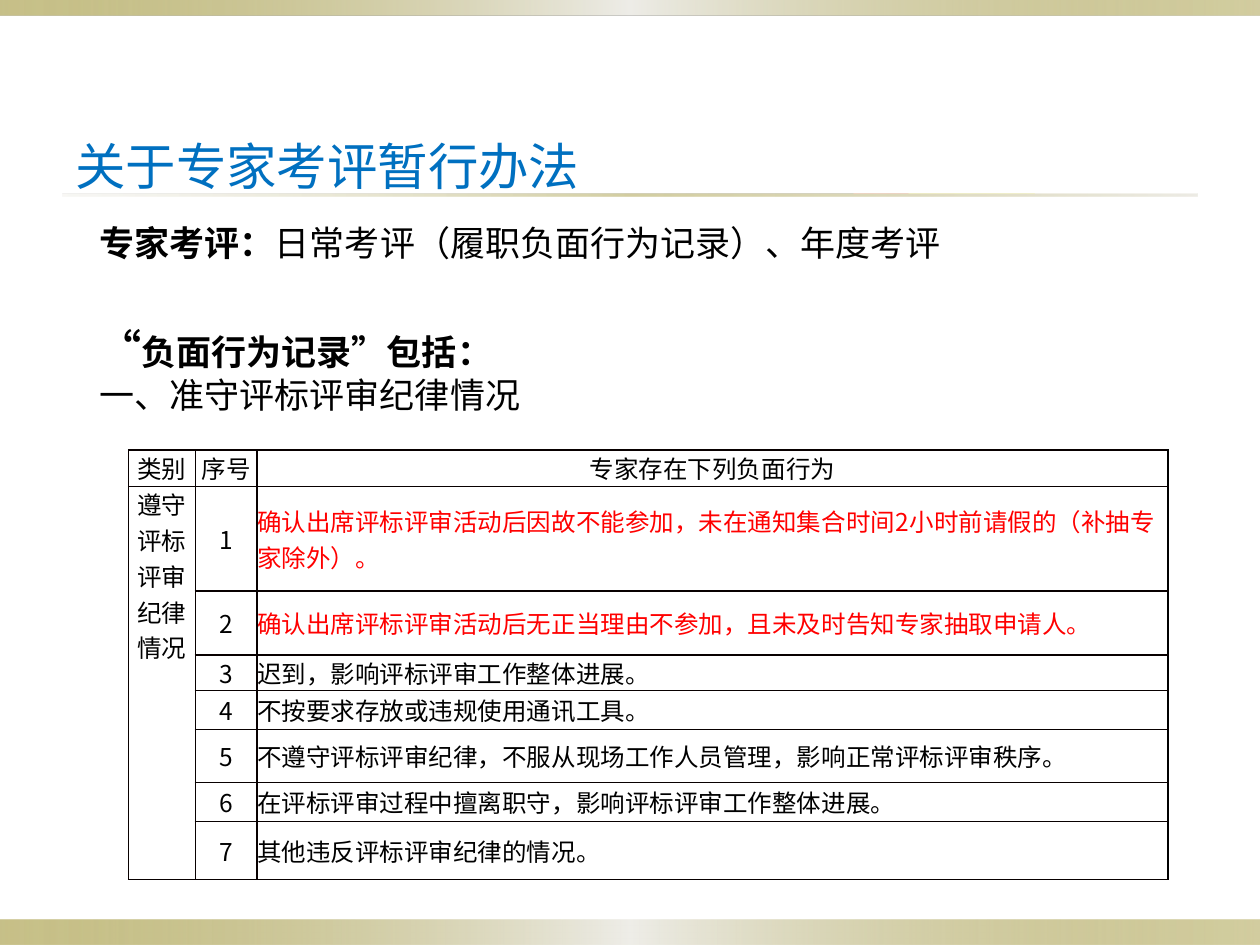
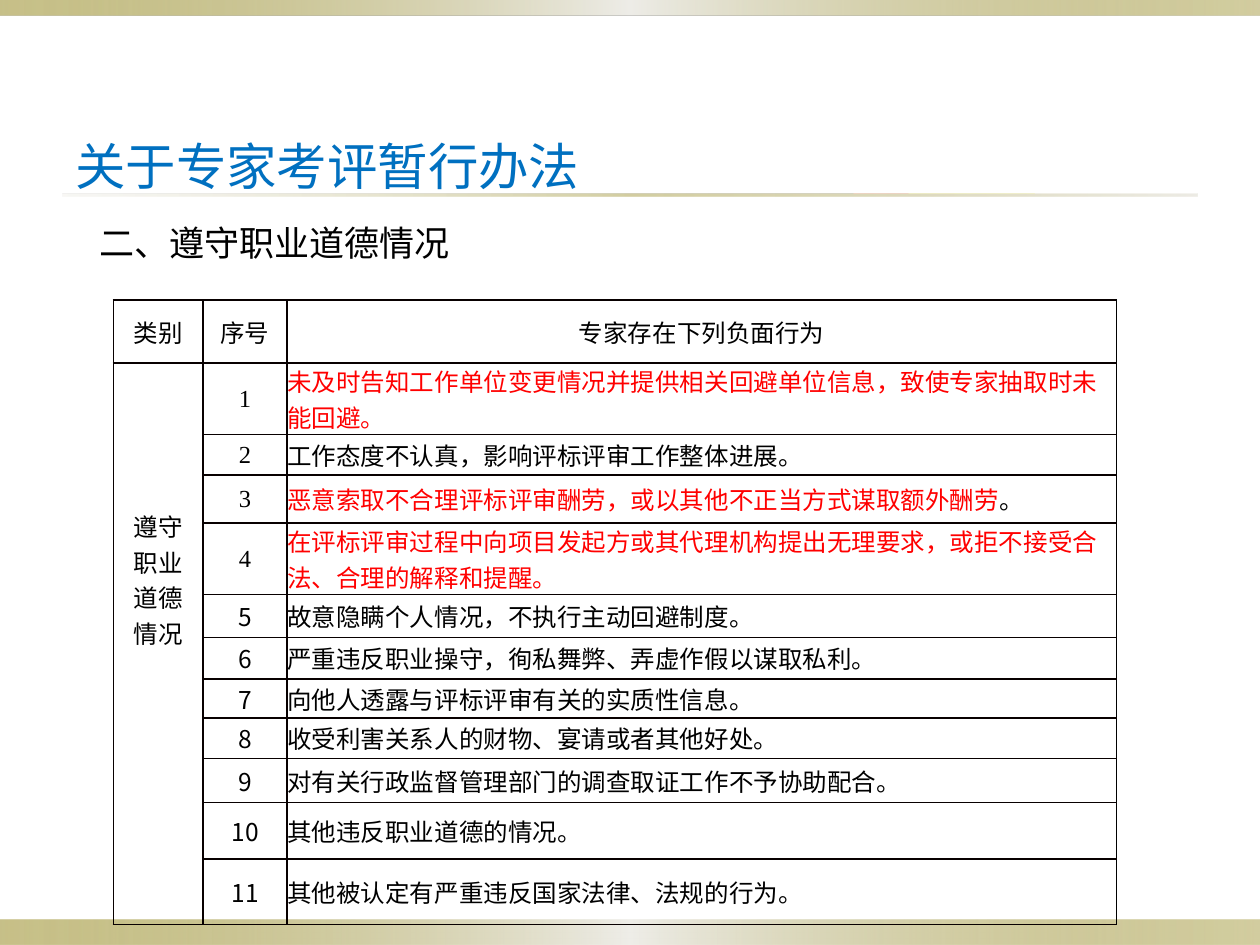
import pptx
import pptx.util
import pptx.dml.color
import pptx.enum.shapes
import pptx.enum.text
import pptx.oxml
from lxml import etree

RGB = pptx.dml.color.RGBColor
ALIGN = pptx.enum.text.PP_ALIGN
ANCHOR = pptx.enum.text.MSO_ANCHOR
BLUE = RGB(0x00, 0x70, 0xC0)
RED = RGB(0xFF, 0x00, 0x00)
BLACK = RGB(0x00, 0x00, 0x00)
BORDER = RGB(0x08, 0x00, 0x00)
OLIVE = RGB(0x91, 0x84, 0x15)
PALE = RGB(0xEE, 0xED, 0xE8)
SAND = RGB(0xDC, 0xD9, 0xCC)

CJK, LATIN, SERIF = "Noto Sans CJK SC", "Karla", "Times New Roman"
COLS, ROWS = 100, 75  # grid cells of a tenth of an inch
A_NS = "http://schemas.openxmlformats.org/drawingml/2006/main"
BAND = [(0, OLIVE, 50), (50, PALE, 100), (100, OLIVE, 40)]
RULE = [(0, SAND, 20), (50, OLIVE, 40), (100, SAND, 50)]

TITLE = "关于专家考评暂行办法"
HEADER = ["类别", "序号", "专家存在下列负面行为"]


def grid(n):
    return pptx.util.Inches(n / 10)


def add_run(p, text, size=14, color=BLACK, bold=False, font=CJK):
    r = p.add_run()
    r.text = text
    r.font.size = pptx.util.Pt(size)
    r.font.color.rgb = color
    r.font.bold = bold
    r.font.name = font
    east_asian = etree.SubElement(r.font._element, f"{{{A_NS}}}ea")
    east_asian.set("typeface", CJK)


def set_borders(cell, sides):
    """Draw the given sides, each as name: (colour, points)."""
    tc_pr = cell._tc.get_or_add_tcPr()
    for i, name in enumerate("LRTB"):
        color, width = sides[name]
        tc_pr.insert(i, pptx.oxml.parse_xml(
            f'<a:ln{name} xmlns:a="{A_NS}" w="{pptx.util.Pt(width)}">'
            f'<a:solidFill><a:srgbClr val="{color}"/></a:solidFill></a:ln{name}>'))


class Deck:
    def __init__(self):
        self.prs = pptx.Presentation()
        self.prs.slide_width, self.prs.slide_height = grid(COLS), grid(ROWS)
        self.s = None

    def new_slide(self):
        """Start a slide with its bands, title and title rule."""
        self.s = self.prs.slides.add_slide(self.prs.slide_layouts[6])
        self.gradient_bar(0, ROWS - 2, COLS, 2, BAND)
        self.gradient_bar(0, 0, COLS, 1.2, BAND)
        self.gradient_bar(5, 15.4, 90, 0.2, RULE)
        tf = self.text_frame(5, 3, 90, 12.5, ANCHOR.BOTTOM)
        tf.margin_bottom = 0
        add_run(tf.paragraphs[0], TITLE, size=28.8, color=BLUE, font=LATIN)

    def gradient_bar(self, x, y, w, h, stops):
        sp = self.s.shapes.add_shape(pptx.enum.shapes.MSO_SHAPE.RECTANGLE,
                                     grid(x), grid(y), grid(w), grid(h))
        sp.shadow.inherit = False
        sp.line.fill.background()
        sp.fill.gradient()
        sp.fill.gradient_angle = 0
        stop_list = sp._element.spPr.find(f".//{{{A_NS}}}gsLst")
        stop_list[:] = [pptx.oxml.parse_xml(
            f'<a:gs xmlns:a="{A_NS}" pos="{pos * 1000}"><a:srgbClr val="{color}">'
            f'<a:alpha val="{alpha * 1000}"/></a:srgbClr></a:gs>')
            for pos, color, alpha in stops]

    def text_frame(self, x, y, w, h, anchor=ANCHOR.TOP):
        tf = self.s.shapes.add_textbox(grid(x), grid(y), grid(w), grid(h)).text_frame
        tf.word_wrap = True
        tf.vertical_anchor = anchor
        return tf

    def body(self, paragraphs):
        """Add paragraphs given as (space before, [(text, format), ...])."""
        tf = self.text_frame(5, 17.5, 90, 51.2)
        tf.margin_left = grid(2.9)
        for i, (before, runs) in enumerate(paragraphs):
            p = tf.add_paragraph() if i else tf.paragraphs[0]
            p.line_spacing = 0.9
            if i:
                p.space_before = pptx.util.Pt(before)
            for text, fmt in runs:
                add_run(p, text, **{"size": 20, "font": LATIN, **fmt})

    def behaviour_table(self, x, y, widths, header_height, category, category_top,
                        behaviours, serif_numbers=0):
        """Behaviours are (row height, [(text, colour), ...]), numbered from 1."""
        heights = [header_height] + [height for height, _ in behaviours]
        table = self.s.shapes.add_table(len(heights), len(widths), grid(x), grid(y),
                                        grid(sum(widths)), grid(sum(heights))).table
        table.first_row = table.horz_banding = False
        for column, width in zip(table.columns, widths):
            column.width = grid(width)
        for row, height in zip(table.rows, heights):
            row.height = grid(height)
        for row in table.rows:
            for col, cell in enumerate(row.cells):
                self.style_cell(cell, outer=col == len(widths) - 1)
        for col, text in enumerate(HEADER):
            self.fill_cell(table.cell(0, col), [[(text, BLACK)]])
        merged = table.cell(1, 0)
        merged.merge(table.cell(len(behaviours), 0))
        merged.vertical_anchor = ANCHOR.TOP
        merged.margin_top = grid(category_top)
        self.fill_cell(merged, [[(line, BLACK)] for line in category])
        for n, (_, runs) in enumerate(behaviours, 1):
            font = SERIF if n <= serif_numbers else CJK
            self.fill_cell(table.cell(n, 1), [[(str(n), BLACK)]], font=font)
            self.fill_cell(table.cell(n, 2), [runs], align=ALIGN.LEFT)

    def style_cell(self, cell, outer):
        cell.fill.background()
        cell.vertical_anchor = ANCHOR.MIDDLE
        cell.margin_left = cell.margin_right = cell.margin_top = cell.margin_bottom = 0
        side = (BLACK, 0.75) if outer else (BORDER, 1)
        set_borders(cell, {"L": side, "R": side, "T": (BORDER, 1), "B": (BORDER, 1)})

    def fill_cell(self, cell, lines, align=ALIGN.CENTER, font=CJK):
        tf = cell.text_frame
        for i, runs in enumerate(lines):
            p = tf.add_paragraph() if i else tf.paragraphs[0]
            p.alignment = align
            for text, color in runs:
                add_run(p, text, color=color, font=font)


def discipline_slide(deck):
    deck.new_slide()
    deck.body([
        (0, [("专家考评：", {"bold": True}), ("日常考评（履职负面行为记录）、年度考评", {})]),
        (37, [("“", {"bold": True, "size": 24}), ("负面行为记录”包括：", {"bold": True})]),
        (2, [("一、准守评标评审纪律情况", {})]),
    ])
    deck.behaviour_table(10.2, 35.7, [5.3, 4.9, 72.3], 2.9, ["遵守", "评标评审纪律情况"], 0, [
        (8.3, [("确认出席评标评审活动后因故不能参加，未在通知集合时间2小时前请假的（补抽专家除外）。", RED)]),
        (5.1, [("确认出席评标评审活动后无正当理由不参加，且未及时告知专家抽取申请人。", RED)]),
        (2.8, [("迟到，影响评标评审工作整体进展。", BLACK)]),
        (3.1, [("不按要求存放或违规使用通讯工具。", BLACK)]),
        (4.2, [("不遵守评标评审纪律，不服从现场工作人员管理，影响正常评标评审秩序。", BLACK)]),
        (3.1, [("在评标评审过程中擅离职守，影响评标评审工作整体进展。", BLACK)]),
        (4.6, [("其他违反评标评审纪律的情况。", BLACK)]),
    ])


def ethics_slide(deck):
    deck.new_slide()
    deck.body([(0, [("二、遵守职业道德情况", {})])])
    deck.behaviour_table(9, 23.8, [7.1, 6.7, 65.8], 5, ["遵守", "职业", "道德", "情况"], 11.5, [
        (5.7, [("未及时告知工作单位变更情况并提供相关回避单位信息，致使专家抽取时未能回避。", RED)]),
        (3.2, [("工作态度不认真，影响评标评审工作整体进展。", BLACK)]),
        (3.8, [("恶意索取不合理评标评审酬劳，或以其他不正当方式谋取额外酬劳", RED), ("。", BLACK)]),
        (5.7, [("在评标评审过程中向项目发起方或其代理机构提出无理要求，或拒不接受合法、合理的解释和提醒。", RED)]),
        (3.4, [("故意隐瞒个人情况，不执行主动回避制度。", BLACK)]),
        (3.3, [("严重违反职业操守，徇私舞弊、弄虚作假以谋取私利。", BLACK)]),
        (3.1, [("向他人透露与评标评审有关的实质性信息。", BLACK)]),
        (3.2, [("收受利害关系人的财物、宴请或者其他好处。", BLACK)]),
        (3.5, [("对有关行政监督管理部门的调查取证工作不予协助配合。", BLACK)]),
        (4.5, [("其他违反职业道德的情况。", BLACK)]),
        (5.2, [("其他被认定有严重违反国家法律、法规的行为。", BLACK)]),
    ], serif_numbers=4)


def main():
    deck = Deck()
    discipline_slide(deck)
    ethics_slide(deck)
    deck.prs.save("out.pptx")


if __name__ == "__main__":
    main()
